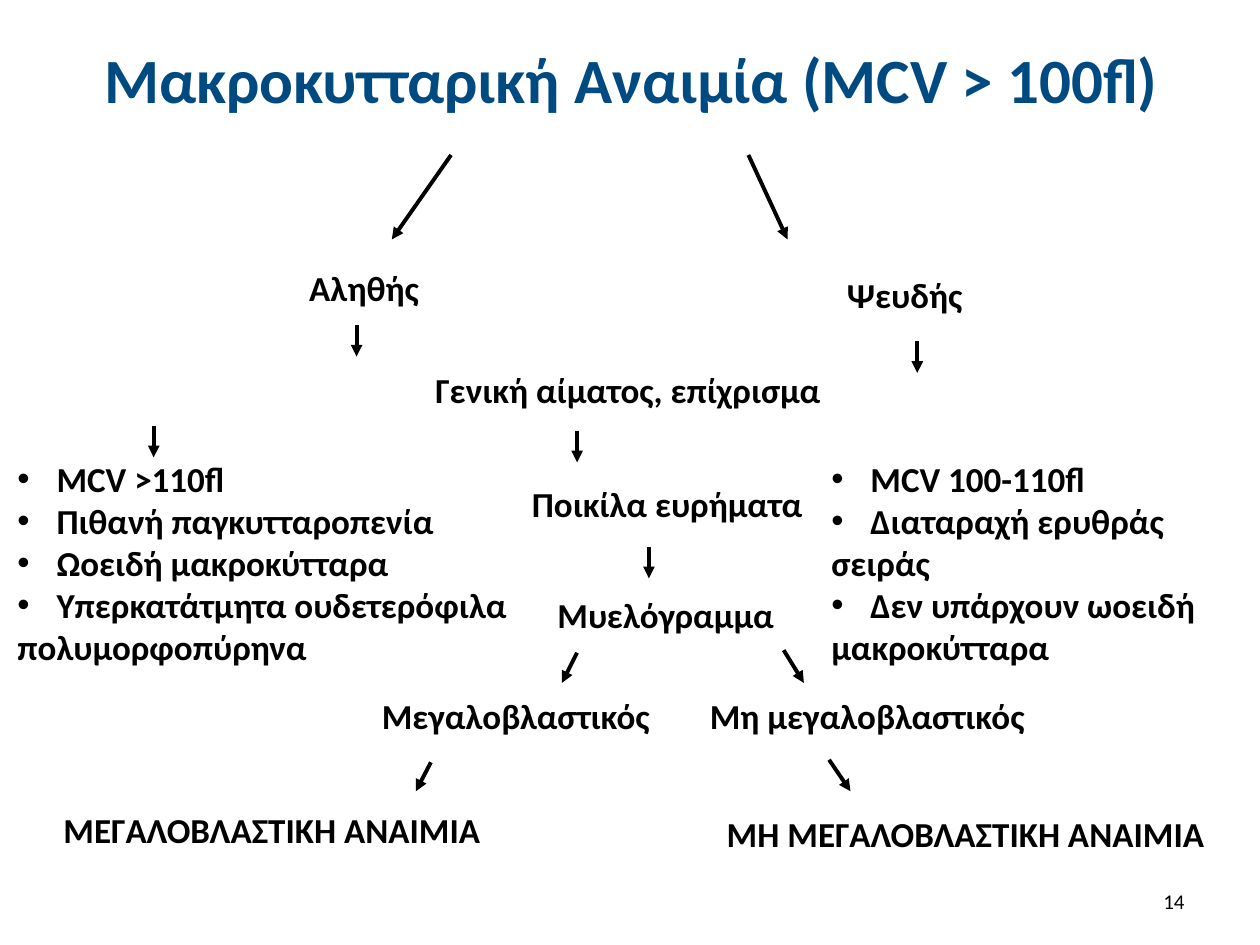
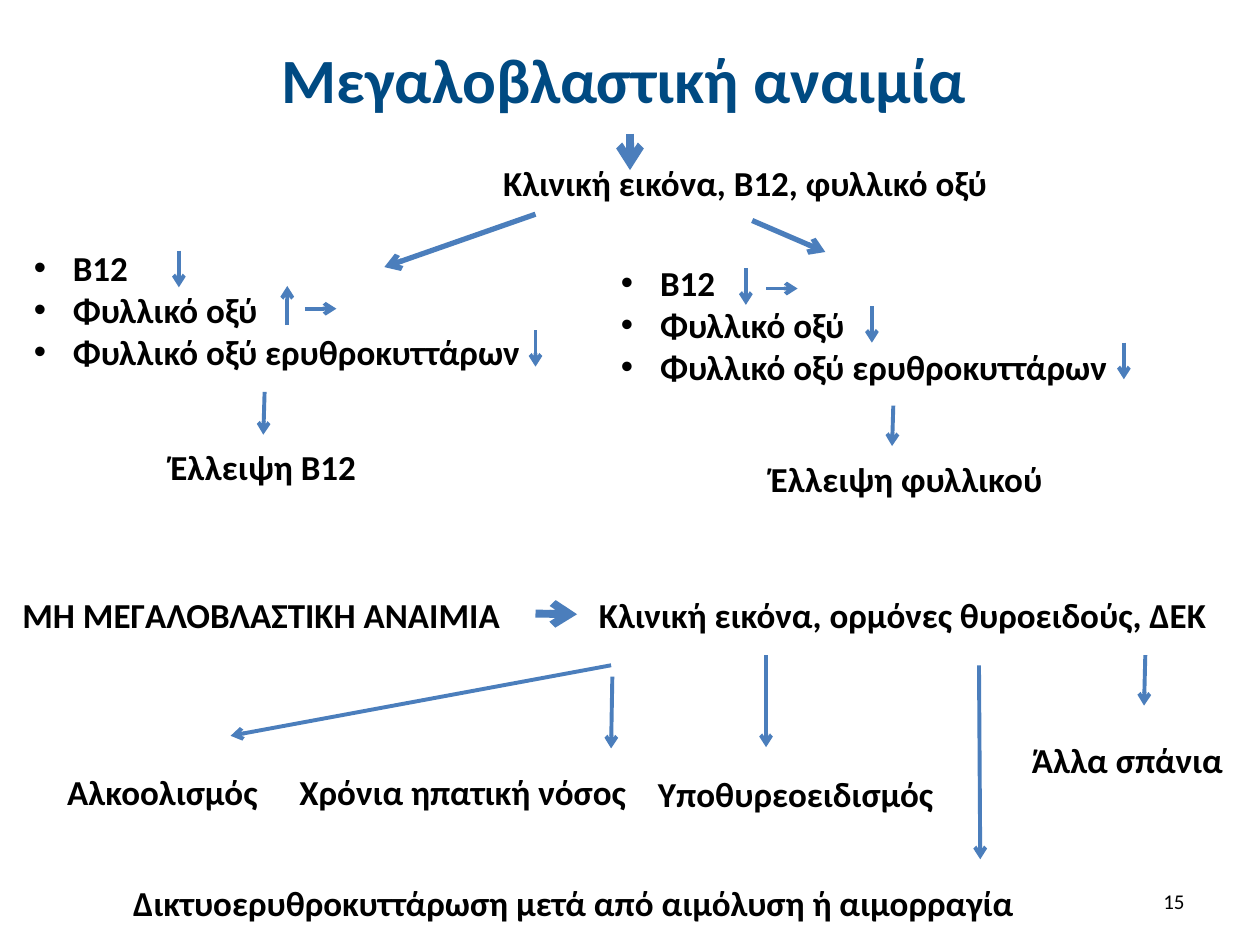
from dataclasses import dataclass
from typing import Optional

from lxml import etree
from pptx import Presentation
from pptx import util as u
from pptx.dml.color import RGBColor
from pptx.enum import shapes, text
from pptx.oxml import ns

PX = 9144  # EMU in one px, at 100 px to the inch
FONT = "Calibri"
COLORS = {"title": "004A82", "ink": "000000", "arrow": "4B7EBC"}
BULLET_INDENT = 31
TITLE_BOX = (51, 13, 900, 99)
NUMBER_BOX = (717, 695, 233, 40)
TITLE_ONLY = 5


@dataclass
class Label:
    words: str
    box: tuple[int, int, int, int]


@dataclass
class Findings:
    """Left-aligned lines; those that continue a bullet start with no bullet."""
    lines: list[str]
    box: tuple[int, int, int, int]
    continuations: tuple[int, ...] = ()


@dataclass
class Arrow:
    start: tuple[int, int]
    end: tuple[int, int]
    width: float = 2.25
    target: Optional[str] = None  # words of the label it is joined to
    site: int = 0


@dataclass
class Scheme:
    title: str
    number: int
    arrow_color: str
    arrow_head: str
    labels: list[Label]
    findings: list[Findings]
    arrows: list[Arrow]


def px(*lengths: int) -> list[u.Emu]:
    return [u.Emu(length * PX) for length in lengths]


def write(paragraph, words: str, size: int, color: str, bold: bool = True) -> None:
    run = paragraph.add_run()
    run.text = words
    run.font.name, run.font.size, run.font.bold = FONT, u.Pt(size), bold
    run.font.color.rgb = RGBColor.from_string(COLORS[color])


def add_frame(slide, box, wrap: bool):
    """Add a vertically centred text box and return it."""
    holder = slide.shapes.add_textbox(*px(*box))
    holder.text_frame.word_wrap = wrap
    holder.text_frame.vertical_anchor = text.MSO_ANCHOR.MIDDLE
    return holder


def add_title(slide, words: str) -> None:
    title = slide.shapes.title
    title.left, title.top, title.width, title.height = px(*TITLE_BOX)
    title.text_frame.auto_size = text.MSO_AUTO_SIZE.NONE
    title.text_frame.vertical_anchor = text.MSO_ANCHOR.MIDDLE
    paragraph = title.text_frame.paragraphs[0]
    paragraph.alignment = text.PP_ALIGN.CENTER
    write(paragraph, words, 36, "title")


def add_number(slide, number: int) -> None:
    paragraph = add_frame(slide, NUMBER_BOX, True).text_frame.paragraphs[0]
    paragraph.alignment = text.PP_ALIGN.RIGHT
    write(paragraph, str(number), 12, "ink", bold=False)


def add_label(slide, label: Label):
    """Add a one-line label that may use the full width of its box."""
    holder = add_frame(slide, label.box, False)
    frame = holder.text_frame
    frame.margin_left = frame.margin_right = 0
    paragraph = frame.paragraphs[0]
    paragraph.alignment = text.PP_ALIGN.CENTER
    write(paragraph, label.words, 20, "ink")
    return holder


def add_bullet(paragraph) -> None:
    properties = paragraph._p.get_or_add_pPr()
    properties.set("marL", str(BULLET_INDENT * PX))
    properties.set("indent", str(-BULLET_INDENT * PX))
    etree.SubElement(properties, ns.qn("a:buFont")).set("typeface", "Arial")
    etree.SubElement(properties, ns.qn("a:buChar")).set("char", "•")


def add_findings(slide, findings: Findings) -> None:
    frame = add_frame(slide, findings.box, True).text_frame
    frame.margin_right = 0
    for index, line in enumerate(findings.lines):
        paragraph = frame.add_paragraph() if index else frame.paragraphs[0]
        paragraph.alignment = text.PP_ALIGN.LEFT
        if index not in findings.continuations:
            add_bullet(paragraph)
        write(paragraph, line, 20, "ink")


def add_arrow(slide, arrow: Arrow, color: str, head: str, targets: dict) -> None:
    connector = slide.shapes.add_connector(
        shapes.MSO_CONNECTOR.STRAIGHT, *px(*arrow.start, *arrow.end))
    if arrow.target:
        connector.end_connect(targets[arrow.target], arrow.site)
    connector.line.color.rgb = RGBColor.from_string(COLORS[color])
    connector.line.width = u.Pt(arrow.width)
    etree.SubElement(connector.line._get_or_add_ln(), ns.qn("a:tailEnd")).set("type", head)
    etree.SubElement(connector._element.spPr, ns.qn("a:effectLst"))


def down(x: int, top: int, length: int) -> Arrow:
    return Arrow((x, top), (x, top + length))


def right(x: int, y: int, length: int = 25) -> Arrow:
    return Arrow((x, y), (x + length, y))


def add_scheme(deck, scheme: Scheme) -> None:
    slide = deck.slides.add_slide(deck.slide_layouts[TITLE_ONLY])
    add_title(slide, scheme.title)
    targets = {label.words: add_label(slide, label) for label in scheme.labels}
    for findings in scheme.findings:
        add_findings(slide, findings)
    for arrow in scheme.arrows:
        add_arrow(slide, arrow, scheme.arrow_color, scheme.arrow_head, targets)
    add_number(slide, scheme.number)


B12_LACK = "Έλλειψη Β12"
THYROID_TESTS = "Κλινική εικόνα, ορμόνες θυροειδούς, ΔΕΚ"
VITAMIN_TESTS = ["Β12", "Φυλλικό οξύ", "Φυλλικό οξύ ερυθροκυττάρων"]
NON_MEGALOBLASTIC = "ΜΗ ΜΕΓΑΛΟΒΛΑΣΤΙΚΗ ΑΝΑΙΜΙΑ "

MACROCYTIC = Scheme(
    "Μακροκυτταρική Αναιμία (MCV > 100fl)", 14, "ink", "triangle",
    labels=[
        Label("Αληθής", (208, 199, 162, 58)),
        Label("Ψευδής", (622, 205, 192, 58)),
        Label("Γενική αίματος, επίχρισμα", (25, 283, 947, 52)),
        Label("Ποικίλα ευρήματα", (417, 374, 225, 51)),
        Label("Μυελόγραμμα ", (419, 462, 225, 51)),
        Label("Μεγαλοβλαστικός ", (300, 542, 225, 51)),
        Label("Μη μεγαλοβλαστικός ", (550, 542, 283, 51)),
        Label("ΜΕΓΑΛΟΒΛΑΣΤΙΚΗ ΑΝΑΙΜΙΑ ", (25, 633, 388, 51)),
        Label(NON_MEGALOBLASTIC, (567, 636, 405, 51)),
    ],
    findings=[
        Findings(["ΜCV >110fl", "Πιθανή παγκυτταροπενία", "Ωοειδή μακροκύτταρα",
                  "Υπερκατάτμητα ουδετερόφιλα", "πολυμορφοπύρηνα"],
                 (4, 367, 408, 159), continuations=(4,)),
        Findings(["ΜCV 100-110fl", "Διαταραχή ερυθράς", "σειράς",
                  "Δεν υπάρχουν ωοειδή", "μακροκύτταρα"],
                 (650, 367, 333, 159), continuations=(2, 4)),
    ],
    arrows=[
        Arrow((358, 123), (311, 190)),
        Arrow((594, 123), (625, 190)),
        *(down(x, top, 25) for x, top in
          [(283, 258), (122, 338), (458, 342), (728, 271), (515, 434)]),
        Arrow((458, 518), (446, 542)),
        Arrow((622, 516), (638, 542)),
        Arrow((342, 605), (330, 628)),
        Arrow((658, 603), (675, 628)),
    ],
)

MEGALOBLASTIC = Scheme(
    "Μεγαλοβλαστική αναιμία ", 15, "arrow", "arrow",
    labels=[
        Label("Κλινική εικόνα, Β12, φυλλικό οξύ", (383, 119, 417, 51)),
        Label(B12_LACK, (121, 345, 176, 51)),
        Label("Έλλειψη φυλλικού", (597, 354, 245, 51)),
        Label(NON_MEGALOBLASTIC, (8, 462, 405, 51)),
        Label(THYROID_TESTS, (458, 462, 517, 51)),
        Label("Αλκοολισμός ", (49, 603, 166, 51)),
        Label("Χρόνια ηπατική νόσος ", (229, 603, 283, 51)),
        Label("Υποθυρεοειδισμός ", (520, 604, 223, 51)),
        Label("Άλλα σπάνια ", (808, 577, 180, 51)),
        Label("Δικτυοερυθροκυττάρωση μετά από αιμόλυση ή αιμορραγία ", (100, 687, 717, 58)),
    ],
    findings=[Findings(VITAMIN_TESTS, (x, y, 422, 117)) for x, y in [(17, 187), (483, 199)]],
    arrows=[
        Arrow((500, 106), (500, 135), 4.5),
        Arrow((425, 170), (305, 212), 3),
        Arrow((597, 175), (655, 200), 3),
        *(down(x, top, 29) for x, top in
          [(142, 199), (425, 262), (592, 213), (692, 243), (892, 272)]),
        Arrow((228, 258), (228, 227)),
        right(242, 245),
        right(608, 229),
        Arrow((210, 311), (210, 343), target=B12_LACK, site=0),
        Arrow((709, 322), (708, 354)),
        Arrow((425, 487), (455, 487), 4.5, target=THYROID_TESTS, site=1),
        Arrow((485, 528), (183, 584)),
        Arrow((486, 537), (485, 594)),
        down(608, 520, 73),
        Arrow((777, 528), (778, 682)),
        Arrow((909, 520), (908, 560)),
    ],
)


def main() -> None:
    deck = Presentation()
    deck.slide_width, deck.slide_height = px(1000, 750)
    for scheme in (MACROCYTIC, MEGALOBLASTIC):
        add_scheme(deck, scheme)
    deck.save("out.pptx")


if __name__ == "__main__":
    main()
